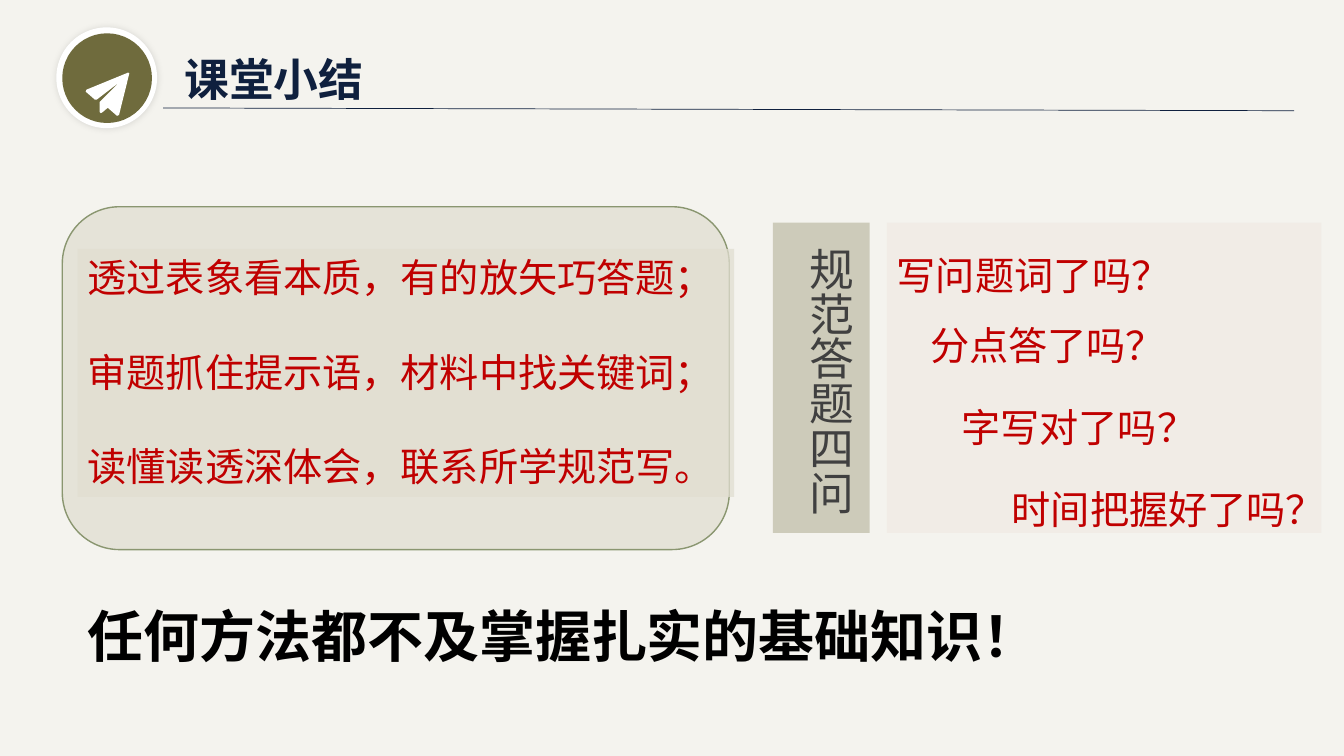
from dataclasses import dataclass

import pptx
import pptx.dml.color
import pptx.enum.shapes
import pptx.enum.text
import pptx.oxml
import pptx.oxml.ns
import pptx.util
from pptx.dml.color import RGBColor
from pptx.enum.shapes import MSO_CONNECTOR, MSO_SHAPE
from pptx.enum.text import MSO_ANCHOR, MSO_AUTO_SIZE, PP_ALIGN
from pptx.util import Cm, Pt

PAPER = RGBColor(0xF4, 0xF3, 0xEE)
NAVY = RGBColor(0x0F, 0x20, 0x3E)
OLIVE = RGBColor(0x6F, 0x6B, 0x3D)
SAGE = RGBColor(0x8A, 0x96, 0x70)
BEIGE = RGBColor(0xE1, 0xDE, 0xD1)
BLUSH = RGBColor(0xEB, 0xDF, 0xD5)
RED = RGBColor(0xC0, 0x00, 0x00)
GREY = RGBColor(0x40, 0x40, 0x40)
BLACK = RGBColor(0x00, 0x00, 0x00)
WHITE = RGBColor(0xFF, 0xFF, 0xFF)

LATIN = "Arial"
HAN = "Noto Sans CJK SC"


@dataclass
class Box:
    """Position and size in centimetres."""
    left: float
    top: float
    width: float
    height: float

    def emu(self) -> tuple:
        return Cm(self.left), Cm(self.top), Cm(self.width), Cm(self.height)


@dataclass
class Style:
    size: int
    color: RGBColor
    bold: bool = False
    latin: str = LATIN
    spacing: float = 1.0
    before: float = 0


@dataclass
class Panel:
    box: Box
    kind: MSO_SHAPE
    fill: RGBColor
    alpha: int = 100
    line: RGBColor | None = None


@dataclass
class Label:
    box: Box
    text: str
    style: Style
    wrap: bool = True
    vertical: bool = False


QUESTION = Style(28, RED, spacing=1.5)
SUMMARY = Style(28, RED, before=33.6)

BADGE = [
    Panel(Box(1.42, 0.69, 2.54, 2.54), MSO_SHAPE.OVAL, WHITE),
    Panel(Box(1.57, 0.84, 2.26, 2.26), MSO_SHAPE.OVAL, OLIVE),
]
# Outline points in hundredths of a centimetre
PAPER_PLANE = [
    (218, 226), (323, 183), (326, 185), (300, 290), (295, 292),
    (272, 272), (269, 274), (257, 284), (254, 285), (251, 282),
    (251, 257), (300, 208), (244, 251), (239, 251), (216, 231),
]
SUMMARY_FRAME = Panel(Box(1.57, 5.21, 16.81, 8.64),
                      MSO_SHAPE.ROUNDED_RECTANGLE, BEIGE, 75, SAGE)
SUMMARY_PANEL = Panel(Box(1.96, 6.27, 16.54, 6.25), MSO_SHAPE.RECTANGLE, BEIGE, 75)
SUMMARY_LINES = [
    "透过表象看本质，有的放矢巧答题；",
    "审题抓住提示语，材料中找关键词；",
    "读懂读透深体会，联系所学规范写。",
]
QUESTION_PANELS = [
    Panel(Box(22.35, 5.61, 10.95, 7.82), MSO_SHAPE.RECTANGLE, BLUSH, 31),
    Panel(Box(19.48, 5.61, 2.44, 7.82), MSO_SHAPE.RECTANGLE, OLIVE, 29),
]
LABELS = [
    Label(Box(19.84, 5.97, 1.88, 7.54), "规范答题四问", Style(32, GREY), vertical=True),
    Label(Box(22.35, 5.61, 7.42, 2.06), "写问题词了吗？", QUESTION, wrap=False),
    Label(Box(23.19, 7.39, 6.43, 2.06), "分点答了吗？", QUESTION, wrap=False),
    Label(Box(23.98, 9.45, 8.64, 2.06), "字写对了吗？", QUESTION),
    Label(Box(25.25, 11.51, 8.64, 2.06), "时间把握好了吗？", QUESTION),
    Label(Box(1.96, 15.04, 24.54, 1.96), "任何方法都不及掌握扎实的基础知识！",
          Style(40, BLACK, bold=True)),
]


def write(tf, lines: list[str], style: Style) -> None:
    for i, line in enumerate(lines):
        p = tf.add_paragraph() if i else tf.paragraphs[0]
        p.alignment = PP_ALIGN.LEFT
        p.line_spacing = style.spacing
        p.space_before = Pt(style.before if i else 0)
        r = p.add_run()
        r.text = line
        r.font.size = Pt(style.size)
        r.font.bold = style.bold
        r.font.name = style.latin
        r.font.color.rgb = style.color
        ea = pptx.oxml.parse_xml(
            f'<a:ea {pptx.oxml.ns.nsdecls("a")} typeface="{HAN}"/>')
        r.font._element.find(pptx.oxml.ns.qn("a:latin")).addnext(ea)


def paint(sp, fill: RGBColor, alpha: int = 100, line: RGBColor | None = None) -> None:
    sp.shadow.inherit = False
    sp.fill.solid()
    sp.fill.fore_color.rgb = fill
    if alpha < 100:
        clr = sp._element.spPr.find(".//" + pptx.oxml.ns.qn("a:srgbClr"))
        clr.append(pptx.oxml.parse_xml(
            f'<a:alpha {pptx.oxml.ns.nsdecls("a")} val="{alpha * 1000}"/>'))
    if line is None:
        sp.line.fill.background()
    else:
        sp.line.color.rgb = line
        sp.line.width = Pt(1)


def add_panel(s, panel: Panel):
    sp = s.shapes.add_shape(panel.kind, *panel.box.emu())
    paint(sp, panel.fill, panel.alpha, panel.line)
    return sp


def add_label(s, label: Label) -> None:
    tf = s.shapes.add_textbox(*label.box.emu()).text_frame
    tf.word_wrap = label.wrap
    tf.auto_size = MSO_AUTO_SIZE.SHAPE_TO_FIT_TEXT
    if label.vertical:
        tf._txBody.bodyPr.set("vert", "eaVert")
    write(tf, [label.text], label.style)


def add_header(s) -> None:
    title = s.shapes.title
    title.left, title.top, title.width, title.height = Box(4.39, 1.17, 5.03, 1.63).emu()
    tf = title.text_frame
    tf.word_wrap = False
    tf.auto_size = MSO_AUTO_SIZE.SHAPE_TO_FIT_TEXT
    tf.vertical_anchor = MSO_ANCHOR.TOP
    write(tf, ["课堂小结"], Style(32, NAVY, bold=True, latin=HAN))

    rule = s.shapes.add_connector(
        MSO_CONNECTOR.STRAIGHT, Cm(4.11), Cm(2.72), Cm(32.61), Cm(2.79))
    rule.line.color.rgb = NAVY
    rule.line.width = Pt(0.5)
    effects = f'<a:effectLst {pptx.oxml.ns.nsdecls("a")}/>'
    rule._element.spPr.append(pptx.oxml.parse_xml(effects))

    # Badge with a soft glow-like shadow under its rim
    rim, _ = [add_panel(s, panel) for panel in BADGE]
    rim._element.spPr.find(pptx.oxml.ns.qn("a:effectLst")).append(pptx.oxml.parse_xml(
        f'<a:outerShdw {pptx.oxml.ns.nsdecls("a")} blurRad="{Pt(5)}" dist="0" dir="0">'
        '<a:srgbClr val="000000"><a:alpha val="11000"/></a:srgbClr></a:outerShdw>'))
    plane = s.shapes.build_freeform(*PAPER_PLANE[0], scale=Cm(0.01))
    plane.add_line_segments(PAPER_PLANE[1:], close=True)
    paint(plane.convert_to_shape(), WHITE)


def main() -> None:
    prs = pptx.Presentation()
    prs.slide_width, prs.slide_height = Cm(33.87), Cm(19.05)
    s = prs.slides.add_slide(prs.slide_layouts[5])
    s.background.fill.solid()
    s.background.fill.fore_color.rgb = PAPER
    add_header(s)

    # Summary on the left
    add_panel(s, SUMMARY_FRAME)
    tf = add_panel(s, SUMMARY_PANEL).text_frame
    tf.word_wrap = True
    tf.vertical_anchor = MSO_ANCHOR.TOP
    write(tf, SUMMARY_LINES, SUMMARY)

    # Four questions on the right, closing sentence below
    for panel in QUESTION_PANELS:
        add_panel(s, panel)
    for label in LABELS:
        add_label(s, label)
    prs.save("out.pptx")


if __name__ == "__main__":
    main()
